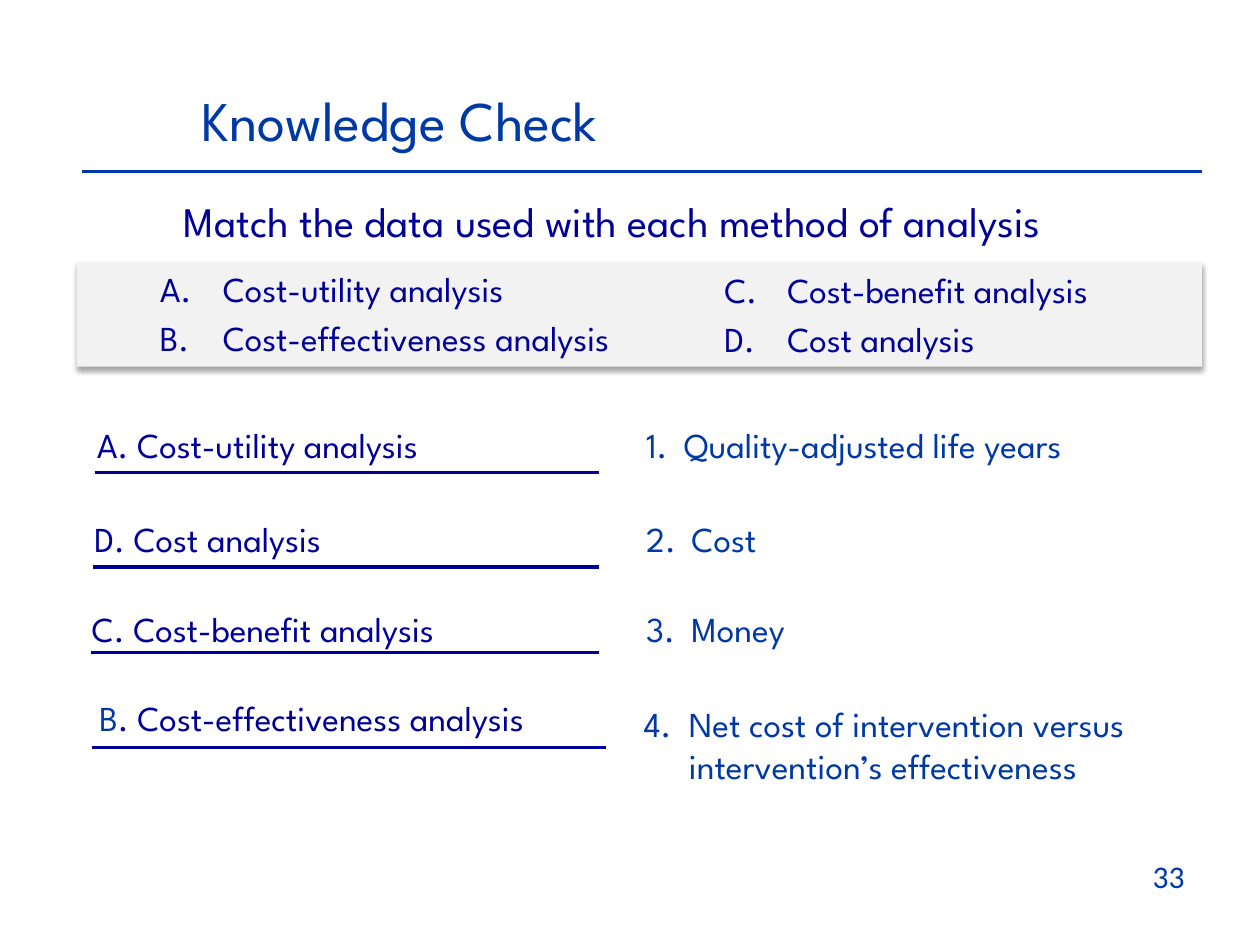
from lxml.etree import SubElement
from pptx import Presentation
from pptx.dml.color import RGBColor
from pptx.enum.shapes import MSO_CONNECTOR as CONN, MSO_SHAPE as SHAPE
from pptx.enum.text import PP_ALIGN as ALIGN
from pptx.oxml.ns import qn
from pptx.util import Inches, Pt

NAVY = RGBColor(0x00, 0x00, 0x99)
BLUE = RGBColor(0x00, 0x39, 0xA6)
GRAY = RGBColor(0xF2, 0xF2, 0xF2)
BLACK = RGBColor(0, 0, 0)

COLS, ROWS = 100, 75
WIDTH, HEIGHT = Inches(10), Inches(7.5)
COL, ROW = WIDTH / COLS, HEIGHT / ROWS

BASE = {"name": "League Spartan", "size": Pt(20)}

ANSWERS = [
    ((6.7, 33.1, 37.2), (7.5, 47.5, 37.5), [("A. Cost-utility analysis", NAVY)]),
    ((6.5, 40.6, 22.9), (7.4, 47.5, 45), [("D. Cost analysis", NAVY)]),
    ((6.3, 47.7, 33.7), (7.2, 47.5, 51.8), [("C. Cost-benefit analysis", NAVY)]),
    ((6.9, 54.8, 41.2), (7.3, 48.1, 59.3),
     [("B", BLUE), (". Cost-effectiveness analysis", NAVY)]),
]
DATA = [
    ((50.3, 33.1, 42.6, 4.4), 0.3, "1.\tQuality-adjusted life years"),
    ((50.3, 40.6, 12.3, 4.4), 0.36, "2.\tCost"),
    ((50.3, 47.7, 17.3, 4.4), 0.36, "3.\tMoney"),
    ((50.1, 55.3, 47.4, 7.7), 0.36,
     "4.\tNet cost of intervention versus\vintervention’s effectiveness"),
]
METHODS = [
    ((11.7, 20.7, 44.8, 8.4), 1, ["Cost-utility analysis", "Cost-effectiveness analysis"]),
    ((56.5, 20.8, 38.9, 8.4), 3, ["Cost-benefit analysis", "Cost analysis"]),
]


def grid(x, y, w, h):
    return round(x * COL), round(y * ROW), round(w * COL), round(h * ROW)


def style(font, color, **formats):
    for key, value in {**BASE, **formats}.items():
        setattr(font, key, value)
    font.color.rgb = color


def add_frame(slide, cell):
    tf = slide.shapes.add_textbox(*grid(*cell)).text_frame
    tf.word_wrap = True
    return tf


def add_text(slide, cell, runs, align=ALIGN.LEFT, **formats):
    p = add_frame(slide, cell).paragraphs[0]
    p.alignment = align
    for text, color in runs:
        r = p.add_run()
        r.text = text
        style(r.font, color, **formats)


def hang(p, indent):
    pPr = p._p.get_or_add_pPr()
    pPr.set("marL", str(Inches(indent)))
    pPr.set("indent", str(-Inches(indent)))
    return pPr


def add_numbered(slide, cell, indent, text):
    p = add_frame(slide, cell).paragraphs[0]
    p.text = text
    hang(p, indent)
    for r in p.runs:
        style(r.font, BLUE)


def add_lettered(slide, cell, start, items):
    tf = add_frame(slide, cell)
    for i, text in enumerate(items):
        p = tf.add_paragraph() if i else tf.paragraphs[0]
        SubElement(hang(p, 0.5), qn("a:buAutoNum"),
                   type="alphaUcPeriod", startAt=str(start))
        if i:
            p.space_before = Pt(4)
        r = p.add_run()
        r.text = text
        style(r.font, NAVY)


def add_rule(slide, left, right, y, color):
    x1, y1, x2, _ = grid(left, y, right, y)
    line = slide.shapes.add_connector(CONN.STRAIGHT, x1, y1, x2, y1)
    line.line.color.rgb = color
    line.line.width = Pt(1.75)
    SubElement(line._element.spPr, qn("a:effectLst"))


def add_panel(slide, cell):
    sp = slide.shapes.add_shape(SHAPE.RECTANGLE, *grid(*cell))
    sp.fill.solid()
    sp.fill.fore_color.rgb = GRAY
    sp.line.fill.background()
    effects = SubElement(sp._element.spPr, qn("a:effectLst"))
    shadow = SubElement(effects, qn("a:outerShdw"), blurRad=str(Pt(3.1)),
                        dist=str(Pt(1.8)), dir="5400000", rotWithShape="0")
    color = SubElement(shadow, qn("a:srgbClr"), val=str(BLACK))
    SubElement(color, qn("a:alpha"), val="35000")


def main():
    prs = Presentation()
    prs.slide_width, prs.slide_height = WIDTH, HEIGHT
    slide = prs.slides.add_slide(prs.slide_layouts[6])

    add_text(slide, (15, 6.3, 42.5, 6.4), [("Knowledge Check", BLUE)], size=Pt(32))
    add_rule(slide, 6.5, 95.4, 13.6, BLUE)
    add_text(slide, (4.6, 15, 88.8, 7.5),
             [("Match the data used with each method of analysis ", NAVY)],
             ALIGN.CENTER, size=Pt(24))
    add_panel(slide, (6.1, 20.8, 89.3, 8.3))
    for cell, start, items in METHODS:
        add_lettered(slide, cell, start, items)
    for cell, rule, runs in ANSWERS:
        add_rule(slide, *rule, NAVY)
        add_text(slide, (*cell, 4.4), runs)
    for cell, indent, text in DATA:
        add_numbered(slide, cell, indent, text)
    add_text(slide, (71.7, 67.5, 23.3, 5.2), [("33", BLUE)], ALIGN.RIGHT,
             name="Calibri", size=Pt(18))

    prs.save("out.pptx")


if __name__ == "__main__":
    main()
